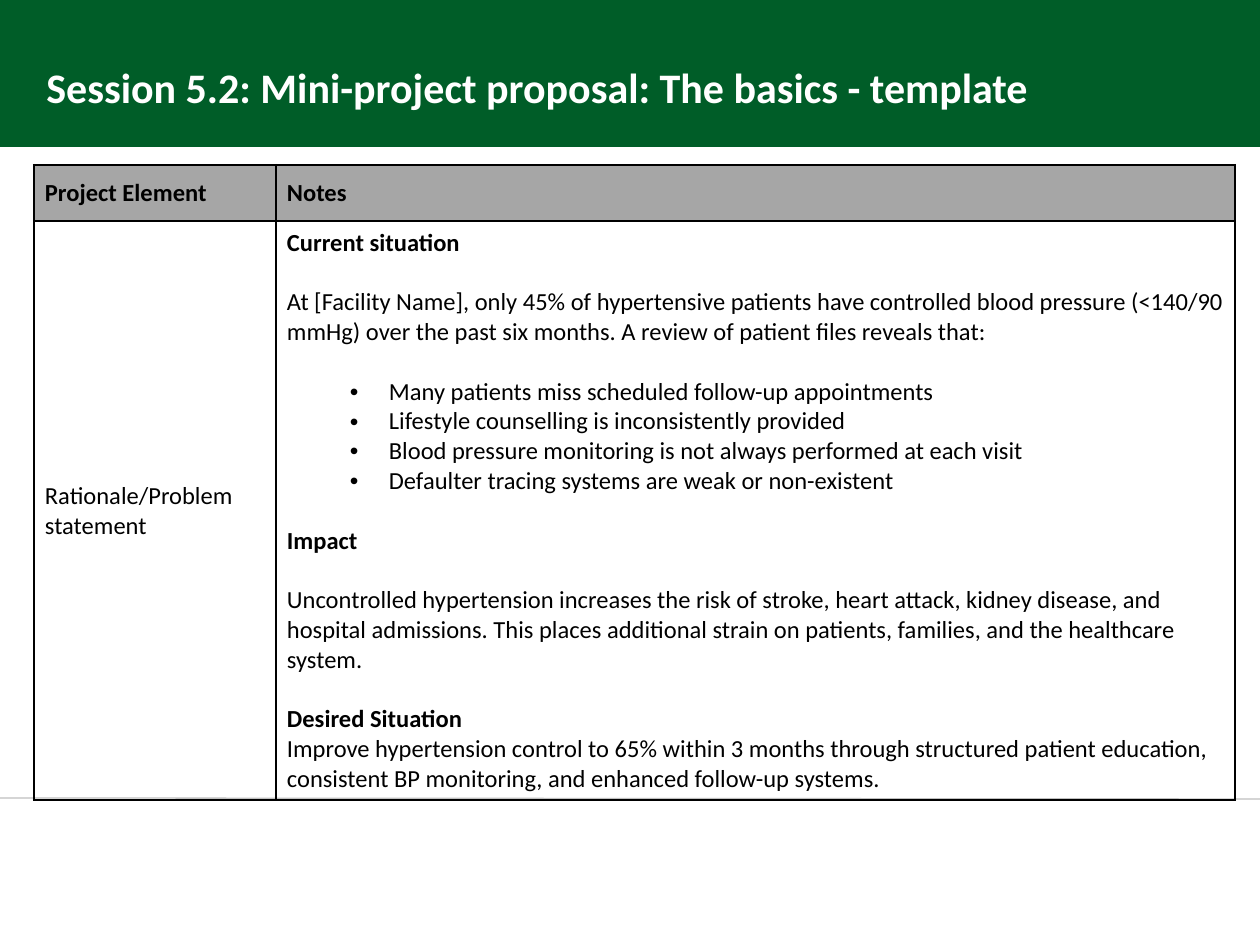
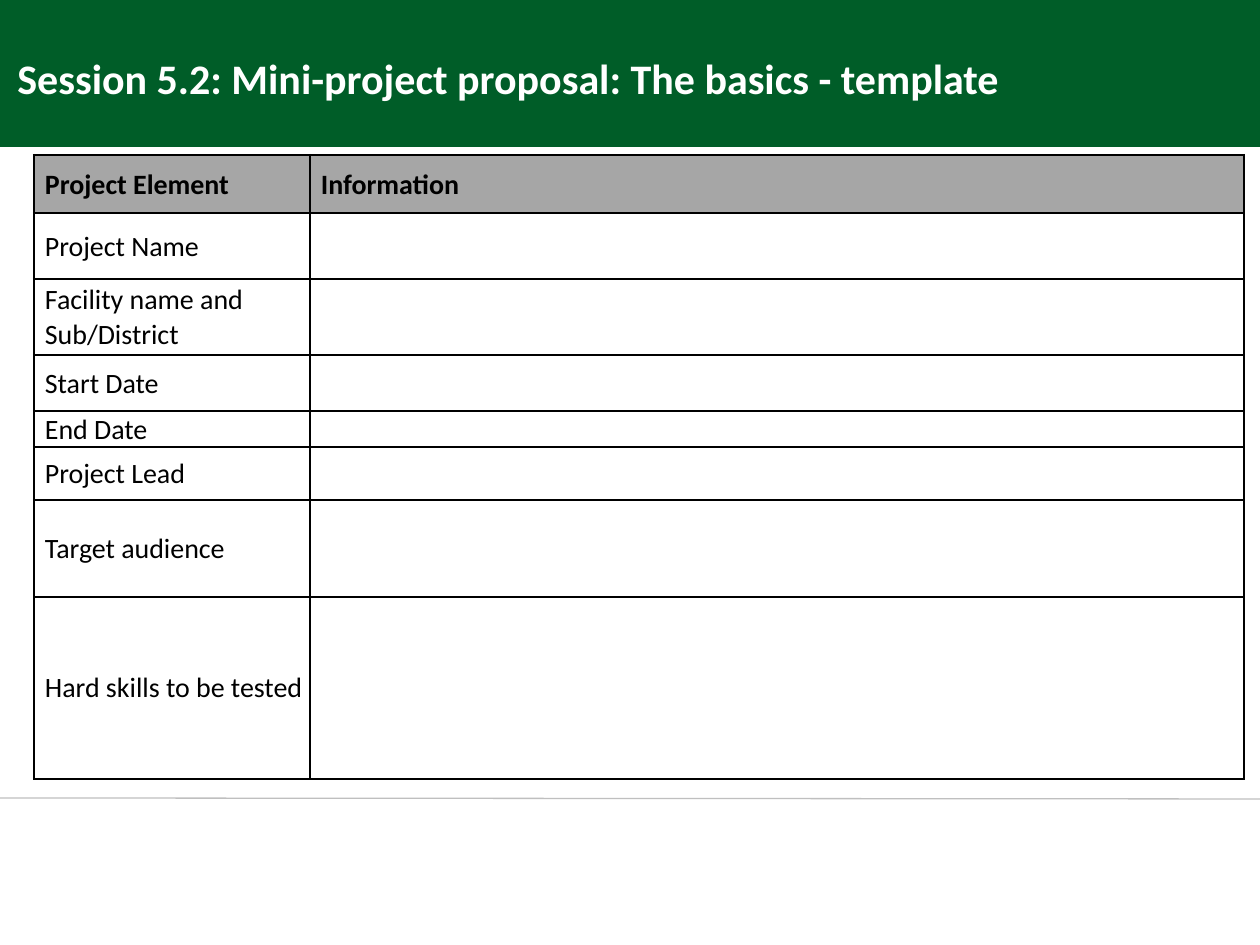
from dataclasses import dataclass

from lxml.etree import SubElement
from pptx import Presentation
from pptx.dml.color import RGBColor
from pptx.enum.shapes import MSO_CONNECTOR as Connector, MSO_SHAPE as Shape
from pptx.enum.text import MSO_ANCHOR as Anchor, MSO_AUTO_SIZE as AutoSize
from pptx.oxml.ns import qn
from pptx.util import Emu, Pt


@dataclass(frozen=True)
class Theme:
    font: str = "Calibri"
    band: str = "005D28"
    rule: str = "BFBFBF"
    header: str = "A6A6A6"
    ink: str = "000000"
    white: str = "FFFFFF"
    title_size: int = 24
    border: float = 1.5
    thin: float = 1
    gap: int = 17


theme = Theme()


def px(count):
    return Emu(round(count * 914400 / 126))


def style(font, size, color, bold):
    values = {"name": theme.font, "size": Pt(size), "bold": bold}
    for key, value in values.items():
        setattr(font, key, value)
    font.color.rgb = RGBColor.from_string(color)


# Content: a cell is a list of (text, kind, has gap before)
TITLE = "Session 5.2: Mini-project proposal: The basics - template"
rationale = [
    ("Current situation", "bold", False),
    ("At [Facility Name], only 45% of hypertensive patients have controlled blood pressure "
     "(<140/90 mmHg) over the past six months. A review of patient files reveals that:", "plain", True),
    ("Many patients miss scheduled follow-up appointments", "bullet", True),
    ("Lifestyle counselling is inconsistently provided", "bullet", False),
    ("Blood pressure monitoring is not always performed at each visit", "bullet", False),
    ("Defaulter tracing systems are weak or non-existent", "bullet", False),
    ("Impact", "bold", True),
    ("Uncontrolled hypertension increases the risk of stroke, heart attack, kidney disease, and "
     "hospital admissions. This places additional strain on patients, families, and the "
     "healthcare system.", "plain", True),
    ("Desired Situation", "bold", True),
    ("Improve hypertension control to 65% within 3 months through structured patient education, "
     "consistent BP monitoring, and enhanced follow-up systems.", "plain", False),
]
elements = ["Project Name", "Facility name and Sub/District", "Start Date", "End Date",
            "Project Lead", "Target audience", "Hard skills to be tested"]


def_plain = "plain"
pages = [
    {
        "title": (34, 55, 1017), "table": (34, 165), "size": 14,
        "columns": [242, 959], "heights": [56, 579],
        "header": ["Project Element", "Notes"],
        "body": [[[("Rationale/Problem statement", def_plain, False)], rationale]],
        "thin": {(1, 0): "B", (1, 1): "B"},
    },
    {
        "title": (5, 46, 1007), "table": (34, 155), "size": 16,
        "columns": [276, 934], "heights": [58, 66, 76, 56, 36, 53, 97, 182],
        "header": ["Project Element", "Information"],
        "body": [[[(name, def_plain, False)], []] for name in elements],
        "thin": {(4, 1): "B", (5, 0): "R", (5, 1): "LRTB", (6, 0): "B",
                 (6, 1): "TB", (7, 0): "LTB", (7, 1): "RTB"},
    },
]

prs = Presentation()
prs.slide_width, prs.slide_height = px(1260), px(945)

for page in pages:
    slide = prs.slides.add_slide(prs.slide_layouts[6])

    # Title band and footer rule
    band = slide.shapes.add_shape(Shape.RECTANGLE, 0, 0, px(1260), px(147))
    band.shadow.inherit = False
    band.fill.solid()
    band.fill.fore_color.rgb = RGBColor.from_string(theme.band)
    band.line.fill.background()
    rule = slide.shapes.add_connector(Connector.STRAIGHT, 0, px(798), px(1260), px(799))
    rule.line.color.rgb = RGBColor.from_string(theme.rule)
    rule.line.width = Pt(0.75)
    SubElement(rule.element.spPr, qn("a:effectLst"))

    # Title
    left, top, width = page["title"]
    title = slide.shapes.add_textbox(px(left), px(top), px(width), px(63)).text_frame
    title.word_wrap = False
    title.auto_size = AutoSize.SHAPE_TO_FIT_TEXT
    title.text = TITLE
    style(title.paragraphs[0].runs[0].font, theme.title_size, theme.white, True)

    # Table grid
    left, top = page["table"]
    columns, heights = page["columns"], page["heights"]
    table = slide.shapes.add_table(len(heights), len(columns), px(left), px(top),
                                   px(sum(columns)), px(sum(heights))).table
    table.first_row = table.horz_banding = False
    for column, width in zip(table.columns, columns):
        column.width = px(width)
    for row, height in zip(table.rows, heights):
        row.height = px(height)

    # Table cells
    header = [[(name, "bold", False)] for name in page["header"]]
    for r, contents in enumerate([header] + page["body"]):
        for c, lines in enumerate(contents):
            cell = table.cell(r, c)
            cell_format = {"margin_left": px(11), "margin_right": px(1), "margin_top": px(1),
                           "margin_bottom": 0, "vertical_anchor": Anchor.MIDDLE}
            for key, value in cell_format.items():
                setattr(cell, key, value)

            borders = cell._tc.get_or_add_tcPr()
            for side in "LRTB":
                weight = theme.thin if side in page["thin"].get((r, c), "") else theme.border
                edge = SubElement(borders, qn(f"a:ln{side}"), w=str(Pt(weight)))
                SubElement(SubElement(edge, qn("a:solidFill")), qn("a:srgbClr"), val=theme.ink)
            if r == 0:
                cell.fill.solid()
                cell.fill.fore_color.rgb = RGBColor.from_string(theme.header)
            else:
                cell.fill.background()

            frame = cell.text_frame
            if not lines:
                SubElement(frame.paragraphs[0]._p, qn("a:endParaRPr"), sz=str(page["size"] * 100))
            for i, (text, kind, gap) in enumerate(lines):
                paragraph = frame.add_paragraph() if i else frame.paragraphs[0]
                if kind == "bullet":
                    paragraph.level = 1
                    indent = paragraph._p.get_or_add_pPr()
                    indent.set("marL", str(px(102)))
                    indent.set("indent", str(px(-39)))
                    SubElement(indent, qn("a:buFont"), typeface="Arial")
                    SubElement(indent, qn("a:buChar"), char="•")
                if gap:
                    paragraph.space_before = Pt(theme.gap)
                run = paragraph.add_run()
                run.text = text
                style(run.font, page["size"], theme.ink, kind == "bold")

prs.save("out.pptx")
